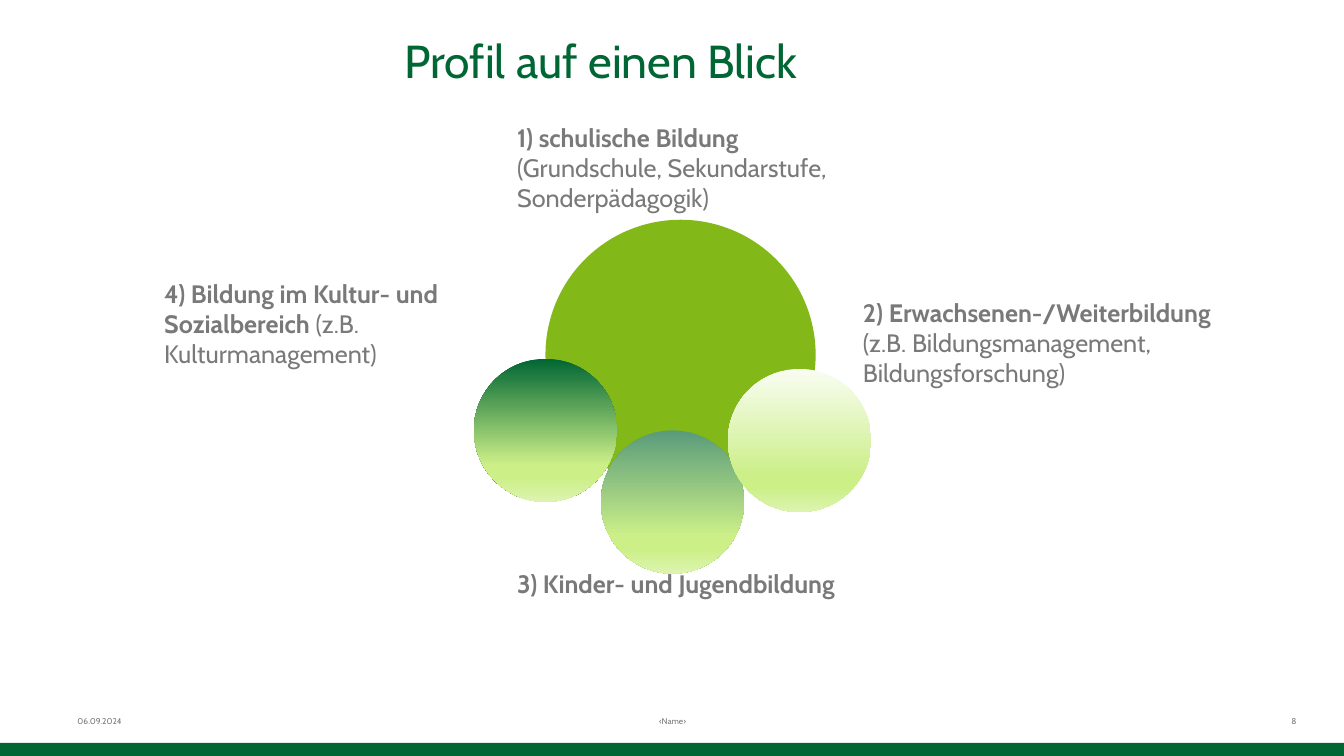
from typing import NamedTuple

from lxml.etree import SubElement
from pptx import Presentation
from pptx.dml.color import RGBColor
from pptx.enum.shapes import MSO_SHAPE
from pptx.enum.text import MSO_ANCHOR, MSO_AUTO_SIZE, PP_ALIGN
from pptx.oxml.ns import qn
from pptx.shapes.autoshape import Shape
from pptx.slide import Slide
from pptx.text.text import Font, TextFrame
from pptx.util import Emu, Pt

PX = 9144  # 100 px to the inch
FACE = "Cabin"
GREEN, LIME, GREY = "006633", "83B819", "797979"
FADE = ((74, "CCEF88"), (83, "CCEF88"), (100, "DDF4B0"))


class Box(NamedTuple):
    left: int
    top: int
    width: int
    height: int


class Part(NamedTuple):
    text: str
    bold: bool = False


class Label(NamedTuple):
    box: Box
    lines: tuple[tuple[Part, ...], ...]


class Foot(NamedTuple):
    box: Box
    text: str
    align: PP_ALIGN
    insets: Box


class Ball(NamedTuple):
    left: int
    top: int
    color: str


BALLS = (
    Ball(470, 356, GREEN),
    Ball(596, 427, "599B7A"),
    Ball(722, 366, "F9FDF2"),
)
BALL_SIZE = 142

LABELS = (
    Label(Box(503, 116, 381, 131), (
        (Part("1) schulische Bildung", True),),
        (Part("(Grundschule, Sekundarstufe, Sonderpädagogik)"),),
    )),
    Label(Box(503, 559, 381, 71), (
        (Part("3) Kinder- und Jugendbildung", True),),
    )),
    Label(Box(846, 290, 440, 131), (
        (Part("2) Erwachsenen-/Weiterbildung", True),),
        (Part("(z.B. Bildungsmanagement, \nBildungsforschung)"),),
    )),
    Label(Box(153, 271, 381, 131), (
        (Part("4) Bildung im Kultur- und", True),),
        (Part("Sozialbereich ", True), Part("(z.B. Kulturmanagement)")),
    )),
)

FEET = (
    Foot(Box(456, 695, 422, 40), "‹Name›", PP_ALIGN.CENTER, Box(7, 4, 7, 4)),
    Foot(Box(67, 695, 311, 40), "06.09.2024", PP_ALIGN.LEFT, Box(10, 5, 10, 5)),
    Foot(Box(975, 695, 311, 40), "8", PP_ALIGN.RIGHT, Box(10, 5, 0, 5)),
)


def emu(box: Box) -> list[Emu]:
    return [Emu(side * PX) for side in box]


def rgb(color: str) -> RGBColor:
    return RGBColor.from_string(color)


def style(font: Font, size: int, color: str, bold: bool = False) -> None:
    font.name, font.size, font.bold = FACE, Pt(size), bold
    font.color.rgb = rgb(color)


def set_frame(frame: TextFrame, insets: Box, anchor: MSO_ANCHOR) -> None:
    frame.word_wrap = True
    frame.auto_size = MSO_AUTO_SIZE.NONE
    frame.vertical_anchor = anchor
    (frame.margin_left, frame.margin_top,
     frame.margin_right, frame.margin_bottom) = emu(insets)


def add_form(slide: Slide, kind: MSO_SHAPE, box: Box, color: str) -> Shape:
    form = slide.shapes.add_shape(kind, *emu(box))
    form.shadow.inherit = False
    form.fill.solid()
    form.fill.fore_color.rgb = rgb(color)
    form.line.fill.background()
    return form


def add_ball(slide: Slide, ball: Ball) -> None:
    """Draw a small circle that fades downwards from its own colour."""
    box = Box(ball.left, ball.top, BALL_SIZE, BALL_SIZE)
    form = add_form(slide, MSO_SHAPE.OVAL, box, ball.color)
    form.fill.gradient()
    form.fill.gradient_angle = 270
    stops = next(form.element.iter(qn("a:gsLst")))
    for stop in list(stops):
        stops.remove(stop)
    for place, color in ((0, ball.color), *FADE):
        stop = SubElement(stops, qn("a:gs"), pos=str(place * 1000))
        SubElement(stop, qn("a:srgbClr"), val=color)


def add_label(slide: Slide, label: Label) -> None:
    frame = slide.shapes.add_textbox(*emu(label.box)).text_frame
    set_frame(frame, Box(10, 5, 10, 5), MSO_ANCHOR.TOP)
    for index, (first, *rest) in enumerate(label.lines):
        para = frame.add_paragraph() if index else frame.paragraphs[0]
        para.text = first.text
        for run in para.runs:
            style(run.font, 18, GREY, first.bold)
        for part in rest:
            run = para.add_run()
            run.text = part.text
            style(run.font, 18, GREY, part.bold)


def add_foot(slide: Slide, foot: Foot) -> None:
    frame = slide.shapes.add_textbox(*emu(foot.box)).text_frame
    set_frame(frame, foot.insets, MSO_ANCHOR.MIDDLE)
    frame.text = foot.text
    para = frame.paragraphs[0]
    para.alignment = foot.align
    style(para.runs[0].font, 6, GREY)


def set_title(slide: Slide, text: str) -> None:
    title = slide.shapes.title
    title.left, title.top, title.width, title.height = emu(Box(208, 32, 776, 125))
    frame = title.text_frame
    set_frame(frame, Box(10, 0, 10, 5), MSO_ANCHOR.TOP)
    frame.text = text
    para = frame.paragraphs[0]
    para.alignment = PP_ALIGN.CENTER
    style(para.runs[0].font, 33, GREEN)


def main() -> None:
    deck = Presentation()
    deck.slide_width, deck.slide_height = Emu(1333 * PX), Emu(750 * PX)
    slide = deck.slides.add_slide(deck.slide_layouts[5])
    add_form(slide, MSO_SHAPE.RECTANGLE, Box(0, 737, 1333, 13), GREEN)
    for foot in FEET:
        add_foot(slide, foot)
    set_title(slide, "Profil auf einen Blick")
    add_form(slide, MSO_SHAPE.OVAL, Box(541, 218, 268, 268), LIME)
    for ball in BALLS:
        add_ball(slide, ball)
    for label in LABELS:
        add_label(slide, label)
    deck.save("out.pptx")


if __name__ == "__main__":
    main()
